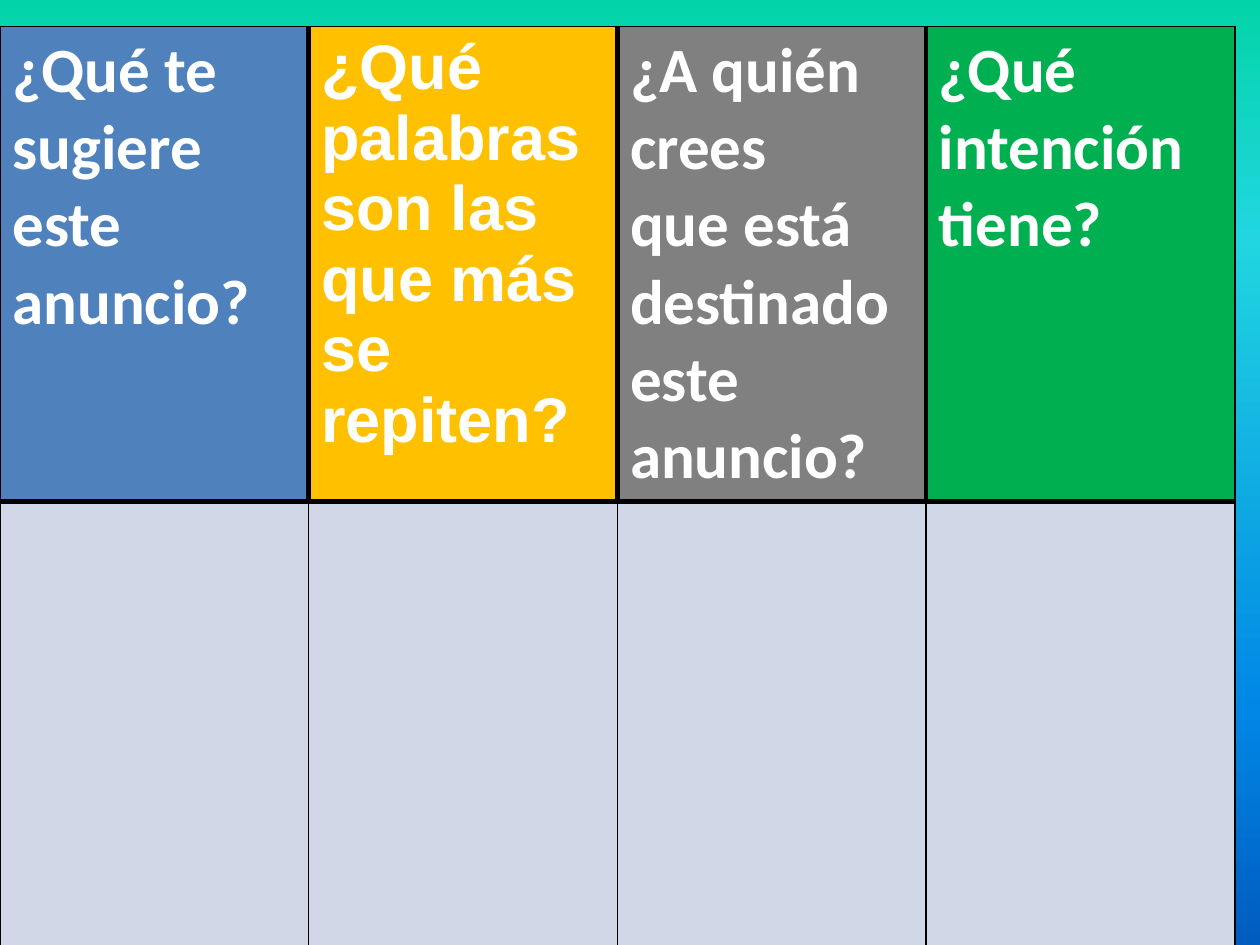
"""Build a slide with a four-column table of questions about an advert."""
from dataclasses import dataclass

from lxml import etree
from pptx import Presentation
from pptx.dml.color import RGBColor
from pptx.oxml.ns import qn
from pptx.util import Pt

BLACK = RGBColor(0, 0, 0)
WHITE = RGBColor(255, 255, 255)
BLUE = RGBColor(0x4F, 0x81, 0xBD)
GOLD = RGBColor(0xFF, 0xC0, 0x00)
GREY = RGBColor(0x80, 0x80, 0x80)
GREEN = RGBColor(0x00, 0xB0, 0x50)
PALE = RGBColor(0xD0, 0xD8, 0xE8)
STOPS = {
    0: RGBColor(0x03, 0xD4, 0xA8),
    25: RGBColor(0x21, 0xD6, 0xE0),
    75: RGBColor(0x00, 0x87, 0xE6),
    100: RGBColor(0x00, 0x5C, 0xBF),
}
WIDE, HIGH = Pt(176.4), Pt(262.8)
THIN, THICK = Pt(1), Pt(3)


@dataclass
class Head:
    lines: list[str]
    fill: RGBColor
    font: str = "Calibri"


HEADS = [
    Head(["¿Qué te sugiere", "este anuncio?"], BLUE),
    Head(["¿Qué palabras", "son las que más", "se repiten?"], GOLD, "Arial"),
    Head(["¿A quién crees", "que está", "destinado este", "anuncio?"], GREY),
    Head(["¿Qué intención", "tiene?"], GREEN),
]


def add_color(node, color: RGBColor) -> None:
    etree.SubElement(node, qn("a:srgbClr"), val=str(color))


def paint_back(slide) -> None:
    fill = slide.background.fill
    fill.gradient()
    fill.gradient_angle = 270
    stops = next(slide.element.iter(qn("a:gsLst")))
    stops.clear()
    for pos, color in STOPS.items():
        add_color(etree.SubElement(stops, qn("a:gs"), pos=str(pos * 1000)), color)


def set_edges(cell, edges: dict[str, int]) -> None:
    props = cell._tc.get_or_add_tcPr()
    for spot, (side, width) in enumerate(edges.items()):
        line = etree.Element(qn(f"a:ln{side}"), w=str(width))
        add_color(etree.SubElement(line, qn("a:solidFill")), BLACK)
        props.insert(spot, line)


def set_fill(cell, color: RGBColor) -> None:
    cell.fill.solid()
    cell.fill.fore_color.rgb = color


def write_head(cell, head: Head) -> None:
    cell.text = "\n".join(head.lines)
    style = {"name": head.font, "size": Pt(36), "bold": True}
    for para in cell.text_frame.paragraphs:
        font = para.runs[0].font
        for key, value in style.items():
            setattr(font, key, value)
        font.color.rgb = WHITE


def add_grid(slide) -> None:
    count = len(HEADS)
    grid = slide.shapes.add_table(
        2, count, Pt(0), Pt(15.1), WIDE * count, HIGH * 2
    ).table
    grid.first_row = grid.horz_banding = False
    for row in grid.rows:
        row.height = HIGH
    for col, head in enumerate(HEADS):
        grid.columns[col].width = WIDE
        top, body = grid.cell(0, col), grid.cell(1, col)
        right = THIN if col == count - 1 else THICK
        left = THICK if col else THIN
        write_head(top, head)
        set_fill(top, head.fill)
        set_edges(top, {"L": left, "R": right, "T": THIN, "B": THICK})
        set_fill(body, PALE)
        set_edges(body, {"L": THIN, "R": THIN, "T": THICK, "B": THIN})


def main() -> None:
    deck = Presentation()
    deck.slide_width, deck.slide_height = Pt(720), Pt(540)
    slide = deck.slides.add_slide(deck.slide_layouts[6])
    paint_back(slide)
    add_grid(slide)
    deck.save("out.pptx")


if __name__ == "__main__":
    main()
